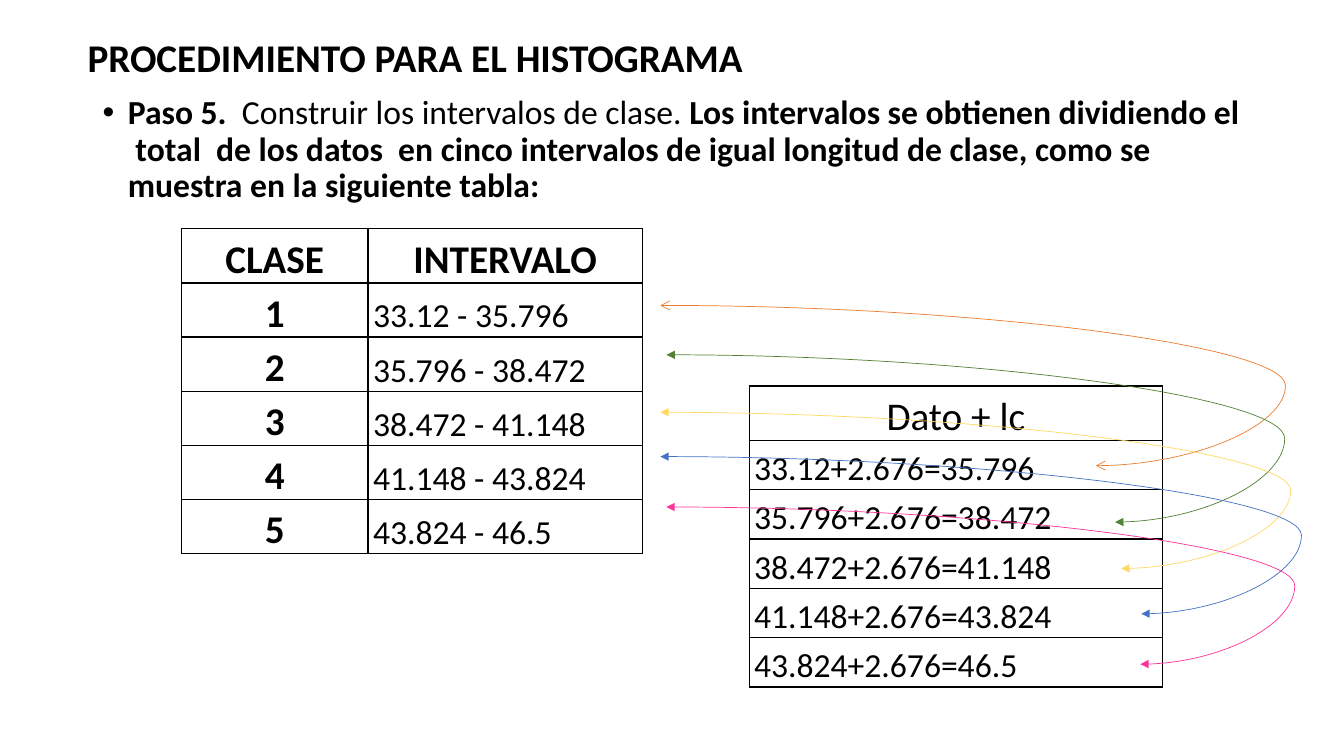
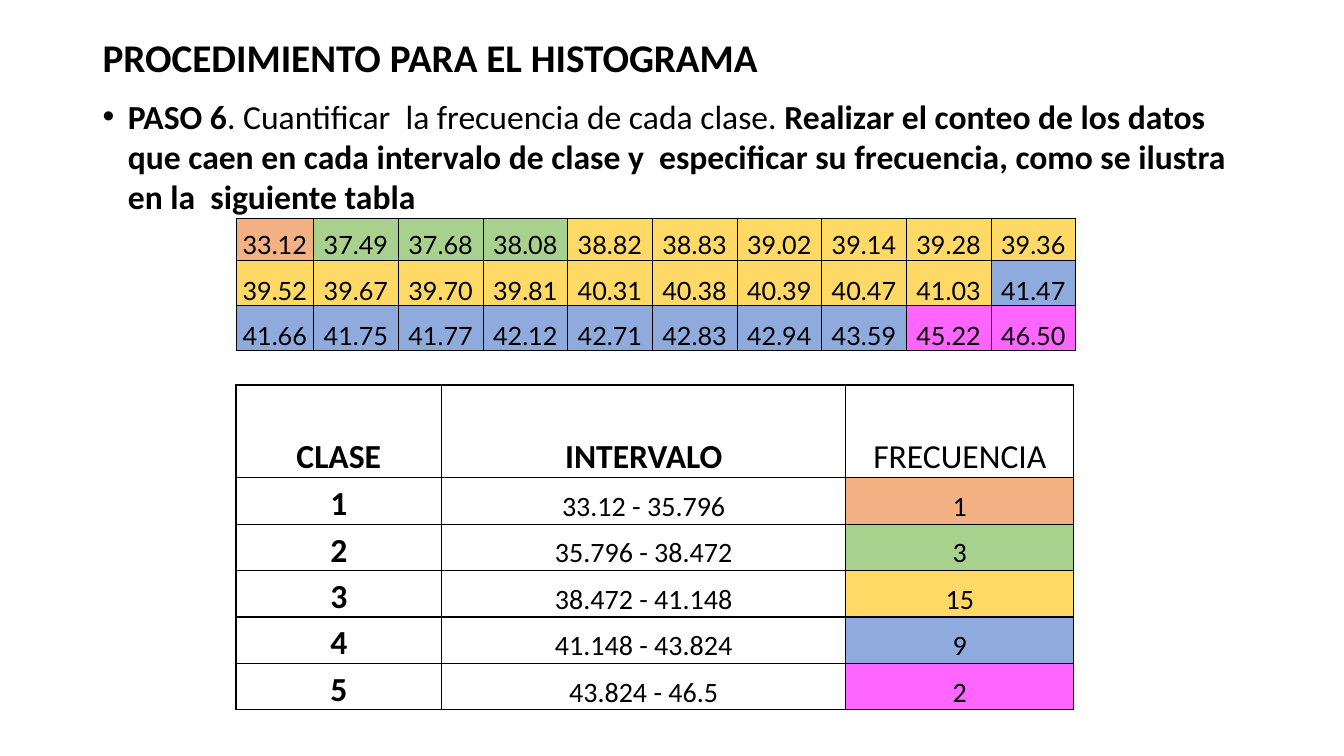
from lxml import etree
from pptx import Presentation
from pptx.dml.color import RGBColor
from pptx.enum.shapes import MSO_CONNECTOR as Connector
from pptx.enum.text import MSO_ANCHOR as Anchor, PP_ALIGN as Align
from pptx.oxml.ns import qn
from pptx.util import Inches, Pt

FONT, DATA_FONT = "Calibri", "Lato"
BLACK = "000000"
TITLE = "PROCEDIMIENTO PARA EL HISTOGRAMA"

STEP_5 = [
    ("Paso 5.  ", True),
    ("Construir los intervalos de clase. ", False),
    ("Los intervalos se obtienen dividiendo el  total  de los datos  en cinco intervalos "
     "de igual longitud de clase, como se muestra en la siguiente tabla:", True),
]
STEP_6 = [
    ("PASO 6", True),
    (". Cuantificar  la frecuencia de cada clase. ", False),
    ("Realizar el conteo de los datos que caen en cada intervalo de clase y  especificar "
     "su frecuencia, como se ilustra en la  siguiente tabla", True),
]

CLASS_WIDTH = 2.676
LIMITS = [33.12, 35.796, 38.472, 41.148, 43.824, 46.5]
CLASS_COLORS = ["F4B183", "A9D18E", "FFD966", "8FAADC", "FF66FF"]
DATA = [
    [33.12, 37.49, 37.68, 38.08, 38.82, 38.83, 39.02, 39.14, 39.28, 39.36],
    [39.52, 39.67, 39.70, 39.81, 40.31, 40.38, 40.39, 40.47, 41.03, 41.47],
    [41.66, 41.75, 41.77, 42.12, 42.71, 42.83, 42.94, 43.59, 45.22, 46.50],
]

# left, top, right, bottom, bulge, color, arrowhead
ARROWS = [
    (6.55, 3.03, 10.87, 4.62, 12.75, "ED7D31", "arrow"),
    (6.61, 3.52, 11.06, 5.18, 12.74, "548235", "triangle"),
    (6.55, 4.09, 11.12, 5.64, 12.80, "FFD966", "triangle"),
    (6.55, 4.53, 11.32, 6.09, 12.91, "4472C4", "triangle"),
    (6.61, 5.03, 11.31, 6.59, 12.84, "FF3399", "triangle"),
]


def rgb(color):
    return RGBColor.from_string(color)


def style_run(run, size, bold=False, font=FONT):
    run.font.name = font
    run.font.size = Pt(size)
    run.font.bold = bold
    run.font.color.rgb = rgb(BLACK)


def add_text_box(slide, left, top, width, height):
    shape = slide.shapes.add_textbox(Inches(left), Inches(top), Inches(width), Inches(height))
    shape.text_frame.word_wrap = True
    return shape.text_frame


def add_title(slide, left):
    text_frame = add_text_box(slide, left, 0.28, 11.5, 0.63)
    text_frame.vertical_anchor = Anchor.MIDDLE
    text_frame.text = TITLE
    paragraph = text_frame.paragraphs[0]
    paragraph.line_spacing = 0.9
    style_run(paragraph.runs[0], 28, True)


def add_step(slide, parts, height, line_spacing, space_after):
    paragraph = add_text_box(slide, 0.92, 0.9, 11.5, height).paragraphs[0]
    paragraph.line_spacing = line_spacing
    paragraph.space_before = Pt(10)
    paragraph.space_after = Pt(space_after)
    for text, bold in parts:
        run = paragraph.add_run()
        run.text = text
        style_run(run, 24, bold)
    properties = paragraph._p.get_or_add_pPr()
    properties.set("marL", str(Inches(0.25)))
    properties.set("indent", str(-Inches(0.25)))
    etree.SubElement(properties, qn("a:buFont")).set("typeface", "Arial")
    etree.SubElement(properties, qn("a:buChar")).set("char", "•")


def add_borders(cell, width):
    properties = cell._tc.get_or_add_tcPr()
    for side in ("a:lnL", "a:lnR", "a:lnT", "a:lnB"):
        line = etree.SubElement(properties, qn(side), w=str(Pt(width)))
        fill = etree.SubElement(line, qn("a:solidFill"))
        etree.SubElement(fill, qn("a:srgbClr"), val=BLACK)


def add_table(slide, left, top, columns, heights, rows, border=1, margins=(0.05, 0),
              line_spacing=1.15, space_after=10, font=FONT):
    table = slide.shapes.add_table(
        len(rows), len(columns), Inches(left), Inches(top),
        Inches(sum(columns)), Inches(sum(heights))).table
    table.first_row = table.horz_banding = False
    for column, width in zip(table.columns, columns):
        column.width = Inches(width)
    for row, height, contents in zip(table.rows, heights, rows):
        row.height = Inches(height)
        for cell, (text, size, bold, align, color) in zip(row.cells, contents):
            side, upper = margins
            cell.margin_left = cell.margin_right = Inches(side)
            cell.margin_top, cell.margin_bottom = Inches(upper), 0
            cell.vertical_anchor = Anchor.BOTTOM
            add_borders(cell, border)
            if color:
                cell.fill.solid()
                cell.fill.fore_color.rgb = rgb(color)
            else:
                cell.fill.background()
            cell.text_frame.text = text
            paragraph = cell.text_frame.paragraphs[0]
            paragraph.alignment = align
            paragraph.line_spacing = line_spacing
            paragraph.space_after = Pt(space_after)
            style_run(paragraph.runs[0], size, bold, font)


def centered(text, size, bold=False, color=None):
    return text, size, bold, Align.CENTER, color


def left_aligned(text, size):
    return text, size, False, Align.LEFT, None


def add_arrow(slide, left, top, right, bottom, bulge, color, head):
    connector = slide.shapes.add_connector(
        Connector.CURVE, Inches(left), Inches(top), Inches(right), Inches(bottom))
    connector.line.color.rgb = rgb(color)
    connector.line.width = Pt(0.5)
    line = connector.line._get_or_add_ln()
    for end in ("a:headEnd", "a:tailEnd"):
        etree.SubElement(line, qn(end), type=head)
    properties = connector._element.spPr
    etree.SubElement(properties, qn("a:effectLst"))
    guides = properties.find(qn("a:prstGeom")).find(qn("a:avLst"))
    bend = round((bulge - left) / (right - left) * 100000)
    etree.SubElement(guides, qn("a:gd"), name="adj1", fmla=f"val {bend}")


def class_of(value):
    return sum(value >= limit for limit in LIMITS[1:-1])


def build_intervals(presentation, classes):
    slide = presentation.slides.add_slide(presentation.slide_layouts[6])
    add_title(slide, 0.77)
    add_step(slide, STEP_5, 5.85, 0.9, 0)
    intervals = [[centered("CLASE", 28, True), centered("INTERVALO", 28, True)]]
    sums = [[centered("Dato + lc", 28)]]
    for number, (low, high) in enumerate(classes, 1):
        intervals.append([centered(str(number), 28, True), left_aligned(f"{low} - {high}", 24)])
        sums.append([left_aligned(f"{low}+{CLASS_WIDTH}={high}", 24)])
    heights = [0.49] * len(intervals)
    add_table(slide, 1.8, 2.27, [1.85, 2.72], heights, intervals)
    add_table(slide, 7.43, 3.83, [4.1], heights, sums)
    for arrow in ARROWS:
        add_arrow(slide, *arrow)


def build_frequencies(presentation, classes):
    slide = presentation.slides.add_slide(presentation.slide_layouts[6])
    add_title(slide, 0.92)
    add_step(slide, STEP_6, 4.82, 1.0, 6)
    members = [class_of(value) for row in DATA for value in row]
    frequencies = [[centered("CLASE", 24, True), centered("INTERVALO", 24, True),
                    centered("FRECUENCIA", 24)]]
    for index, (low, high) in enumerate(classes):
        frequencies.append([
            centered(str(index + 1), 24, True),
            centered(f"{low} - {high}", 20),
            centered(str(members.count(index)), 20, color=CLASS_COLORS[index]),
        ])
    add_table(slide, 2.34, 3.82, [2.04, 4.01, 2.26], [0.92] + [0.45] * len(classes), frequencies)
    values = [[centered(f"{value:.2f}", 18, color=CLASS_COLORS[class_of(value)])
               for value in row] for row in DATA]
    add_table(slide, 2.34, 2.17, [0.77] + [0.84] * 9, [0.41, 0.45, 0.45], values,
              border=0.5, margins=(0.01, 0.01), line_spacing=1.0, space_after=0, font=DATA_FONT)


def main():
    presentation = Presentation()
    presentation.slide_width = Inches(13.33)
    presentation.slide_height = Inches(7.5)
    classes = list(zip(LIMITS, LIMITS[1:]))
    build_intervals(presentation, classes)
    build_frequencies(presentation, classes)
    presentation.save("out.pptx")


if __name__ == "__main__":
    main()
